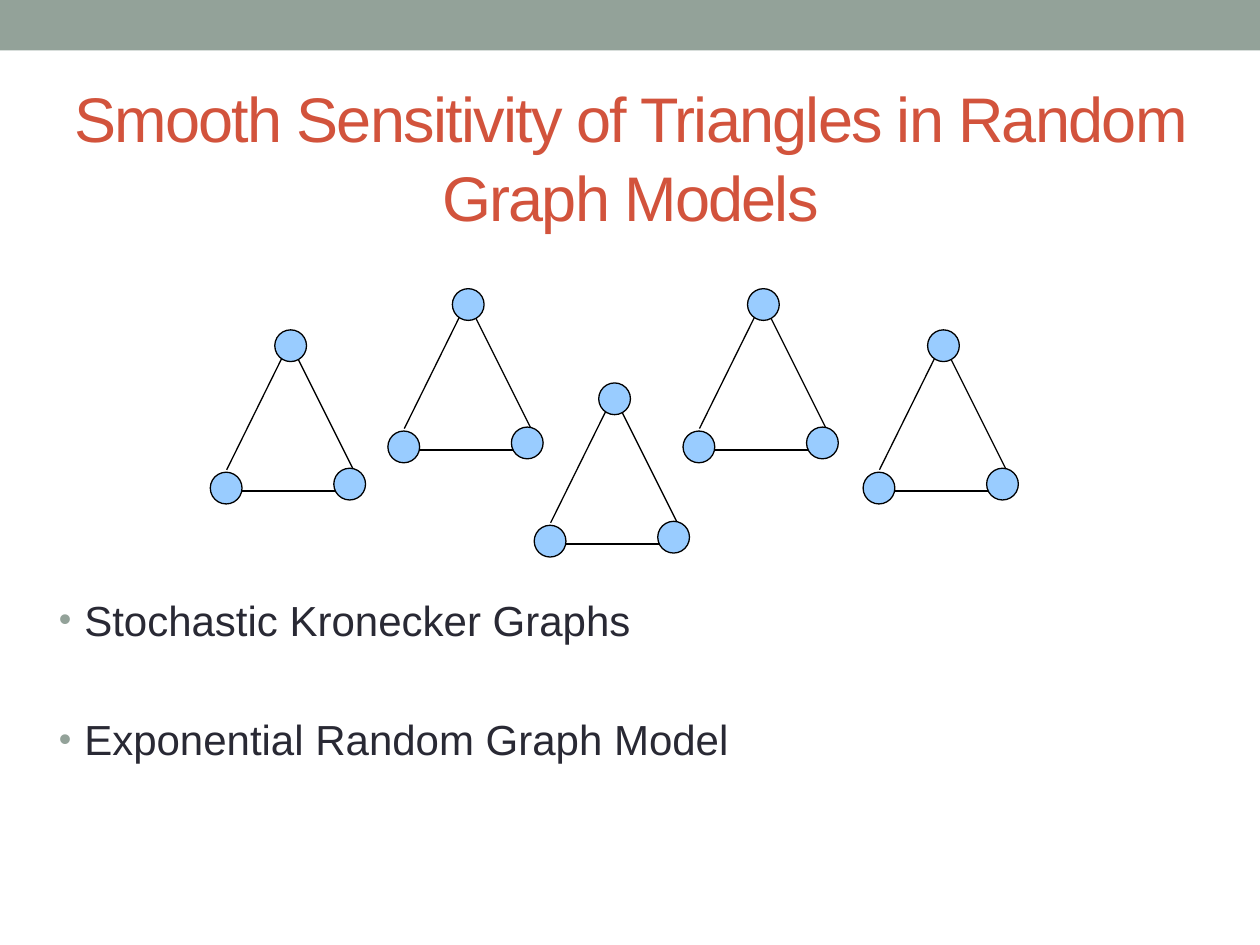
from lxml import etree
from pptx import Presentation
from pptx.dml.color import RGBColor
from pptx.enum.shapes import MSO_CONNECTOR, MSO_SHAPE
from pptx.enum.text import MSO_ANCHOR, PP_ALIGN
from pptx.oxml.ns import qn
from pptx.util import Cm, Pt

LINE = MSO_CONNECTOR.STRAIGHT
OVAL = MSO_SHAPE.OVAL
RECT = MSO_SHAPE.RECTANGLE
MIDDLE, TOP = MSO_ANCHOR.MIDDLE, MSO_ANCHOR.TOP
CENTER, LEFT = PP_ALIGN.CENTER, PP_ALIGN.LEFT

FONT = "Arial"
COLORS = {
    "bar": "93A299",
    "title": "D2533C",
    "text": "292934",
    "node": "99CCFF",
    "edge": "000000",
}

# Triangle parts in cm, measured from the triangle's own corner
SIZE = 0.64
NODES = [(2.49, 2.79), (1.3, 0), (0, 2.87)]
EDGES = [
    (0.33, 2.82, 1.6, 0.25),
    (1.6, 0.25, 2.87, 2.79),
    (0.64, 3.25, 2.54, 3.25),
]
SPOTS = [(10.77, 7.72), (7.82, 5.82), (13.77, 5.82), (4.24, 6.65), (17.4, 6.65)]


def color(name):
    return RGBColor.from_string(COLORS[name])


def add_shape(slide, kind, box, fill, line=None):
    shape = slide.shapes.add_shape(kind, *map(Cm, box))
    shape.shadow.inherit = False
    shape.fill.solid()
    shape.fill.fore_color.rgb = color(fill)
    if line:
        shape.line.color.rgb = color(line)
        shape.line.width = Pt(0.75)
    else:
        shape.line.fill.background()


def add_edge(slide, ends):
    edge = slide.shapes.add_connector(LINE, *map(Cm, ends))
    edge.line.color.rgb = color("edge")
    edge.line.width = Pt(0.75)
    etree.SubElement(edge._element.spPr, qn("a:effectLst"))


def add_triangle(slide, x, y):
    for x1, y1, x2, y2 in EDGES:
        add_edge(slide, (x + x1, y + y1, x + x2, y + y2))
    for dx, dy in NODES:
        add_shape(slide, OVAL, (x + dx, y + dy, SIZE, SIZE), "node", "edge")


def add_text(slide, box, lines, size, tone, align, anchor):
    frame = slide.shapes.add_textbox(*map(Cm, box)).text_frame
    frame.word_wrap = True
    frame.vertical_anchor = anchor
    frame.text = "\n".join(lines)
    for para in frame.paragraphs:
        para.alignment = align
        para.font.name = FONT
        para.font.size = Pt(size)
        para.font.color.rgb = color(tone)
    return frame.paragraphs


def add_bullet(para):
    props = para._p.get_or_add_pPr()
    props.set("marL", str(Cm(0.51)))
    props.set("indent", str(-Cm(0.51)))
    marks = [
        etree.Element(qn("a:buClr")),
        etree.Element(qn("a:buSzPct"), val="85000"),
        etree.Element(qn("a:buFont"), typeface=FONT),
        etree.Element(qn("a:buChar"), char="•"),
    ]
    etree.SubElement(marks[0], qn("a:srgbClr"), val=COLORS["bar"])
    # Bullet marks stand before the default run properties
    for mark in marks:
        props.find(qn("a:defRPr")).addprevious(mark)


def main():
    prs = Presentation()
    prs.slide_width, prs.slide_height = Cm(25.4), Cm(19.05)
    slide = prs.slides.add_slide(prs.slide_layouts[6])

    # Top bar
    add_shape(slide, RECT, (0, 0, 25.4, 1.02), "bar")

    # Title
    title = add_text(
        slide, (0.43, 1.33, 24.56, 3.6),
        ["Smooth Sensitivity of Triangles in Random Graph Models"],
        36, "title", CENTER, MIDDLE)[0]
    title.line_spacing = 1.05
    for run in title.runs:
        run.font._element.set("spc", "-100")

    # Graph models
    items = add_text(
        slide, (0.94, 11.86, 22.86, 6.15),
        ["Stochastic Kronecker Graphs", "Exponential Random Graph Model"],
        24, "text", LEFT, TOP)
    for para, gap in zip(items, (1.5, 39.3)):
        para.space_before = Pt(gap)
        add_bullet(para)

    # Triangles
    for x, y in SPOTS:
        add_triangle(slide, x, y)

    prs.save("out.pptx")


if __name__ == "__main__":
    main()
